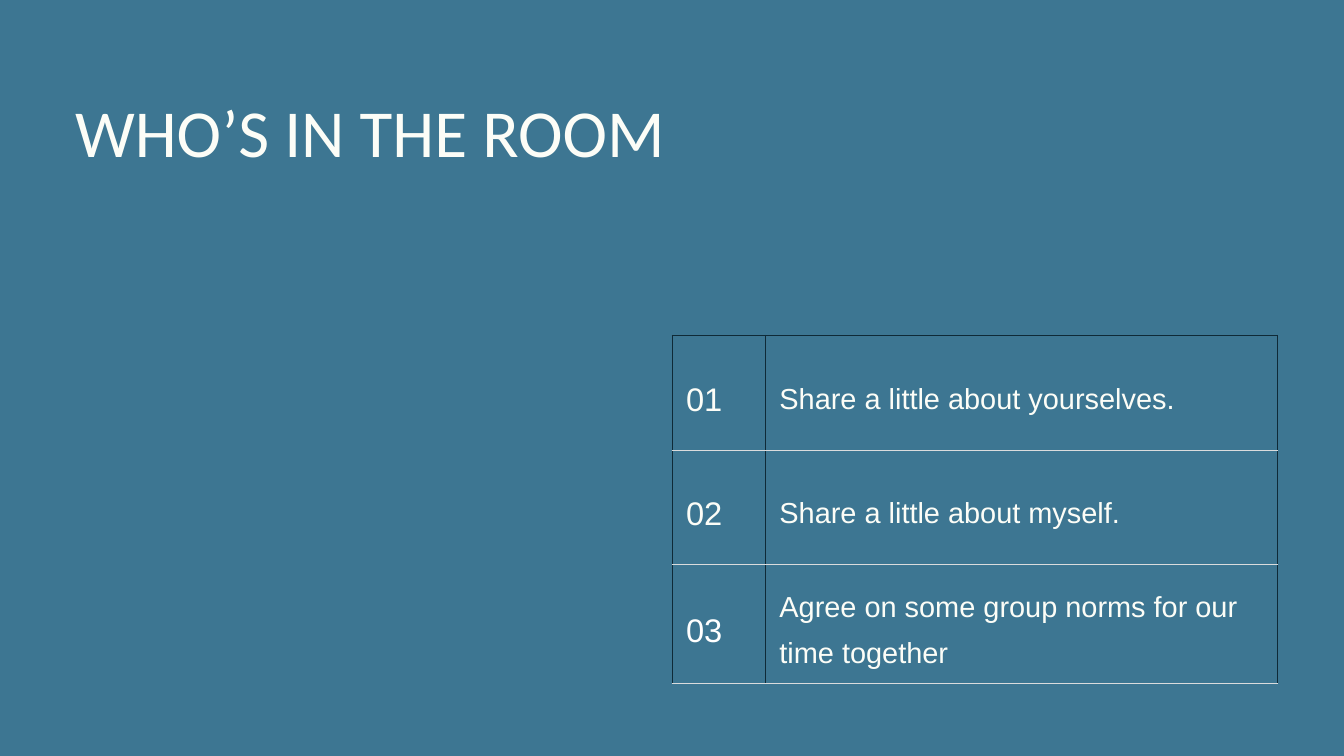
import dataclasses

import lxml.etree
import pptx
import pptx.dml.color
import pptx.enum.text
import pptx.oxml.ns
import pptx.util

Cm = pptx.util.Cm


@dataclasses.dataclass(frozen=True)
class Theme:
    background: str = "3D7692"
    text: str = "FCFDF7"
    white: str = "FFFFFF"
    dark_line: str = "0F2A37"
    light_line: str = "DBDCDD"
    title_font: str = "Calibri"
    body_font: str = "Arial"
    title_size: int = 72
    number_size: int = 35
    item_size: int = 31
    line_width: float = 0.75


def write_text(frame, text, *, font, size, color, line_spacing, margin, anchor):
    frame.word_wrap = True
    frame.vertical_anchor = anchor
    frame.margin_left = frame.margin_right = Cm(margin)
    frame.margin_top = frame.margin_bottom = Cm(margin)
    paragraph = frame.paragraphs[0]
    paragraph.alignment = pptx.enum.text.PP_ALIGN.LEFT
    paragraph.line_spacing = line_spacing
    run = paragraph.add_run()
    run.text = text
    run.font.name = font
    run.font.size = pptx.util.Pt(size)
    run.font.color.rgb = pptx.dml.color.RGBColor.from_string(color)


class SlideBuilder:
    def __init__(self, presentation, theme):
        self.theme = theme
        title_only = presentation.slide_layouts[5]
        self.slide = presentation.slides.add_slide(title_only)
        fill = self.slide.background.fill
        fill.solid()
        fill.fore_color.rgb = pptx.dml.color.RGBColor.from_string(theme.background)

    def title(self, text, left, top, width, height):
        shape = self.slide.shapes.title
        shape.left, shape.top = Cm(left), Cm(top)
        shape.width, shape.height = Cm(width), Cm(height)
        write_text(shape.text_frame, text, font=self.theme.title_font,
                   size=self.theme.title_size, color=self.theme.text,
                   line_spacing=1.2, margin=0,
                   anchor=pptx.enum.text.MSO_ANCHOR.TOP)
        shape.text_frame.auto_size = pptx.enum.text.MSO_AUTO_SIZE.NONE

    def borders(self, cell, colors):
        """Draw the cell edges; colors maps L, R, T and B, in that order."""
        properties = cell._tc.get_or_add_tcPr()
        for position, (side, color) in enumerate(colors.items()):
            line = lxml.etree.Element(
                pptx.oxml.ns.qn(f"a:ln{side}"),
                w=str(pptx.util.Pt(self.theme.line_width)))
            fill = lxml.etree.SubElement(line, pptx.oxml.ns.qn("a:solidFill"))
            lxml.etree.SubElement(fill, pptx.oxml.ns.qn("a:srgbClr"), val=color)
            properties.insert(position, line)

    def numbered_table(self, items, left, top, column_widths, row_height):
        theme = self.theme
        table = self.slide.shapes.add_table(
            len(items), len(column_widths), Cm(left), Cm(top),
            Cm(sum(column_widths)), Cm(row_height * len(items))).table
        table.first_row = table.horz_banding = False
        for column, width in zip(table.columns, column_widths):
            column.width = Cm(width)
        for index, item in enumerate(items):
            table.rows[index].height = Cm(row_height)
            last = index == len(items) - 1
            contents = (
                (f"{index + 1:02}", theme.number_size, theme.white if last else theme.text),
                (item, theme.item_size, theme.text),
            )
            edges = {
                "L": theme.dark_line,
                "R": theme.dark_line,
                "T": theme.light_line if index else theme.dark_line,
                "B": theme.light_line,
            }
            for cell, (text, size, color) in zip(table.rows[index].cells, contents):
                cell.fill.background()
                self.borders(cell, edges)
                cell.vertical_anchor = pptx.enum.text.MSO_ANCHOR.MIDDLE
                cell.margin_left = cell.margin_right = Cm(0.53)
                cell.margin_top = cell.margin_bottom = Cm(0.53)
                write_text(cell.text_frame, text, font=theme.body_font, size=size,
                           color=color, line_spacing=1.4, margin=0.53,
                           anchor=pptx.enum.text.MSO_ANCHOR.MIDDLE)
                # Cells keep their layout in the cell properties only.
                body = cell.text_frame._txBody.bodyPr
                body.attrib.clear()


def main():
    presentation = pptx.Presentation()
    presentation.slide_width = Cm(50.8)
    presentation.slide_height = Cm(28.58)
    builder = SlideBuilder(presentation, Theme())
    builder.title("WHO’S IN THE ROOM", left=2.84, top=2.82, width=23.34, height=3.07)
    builder.numbered_table(
        ["Share a little about yourselves.",
         "Share a little about myself.",
         "Agree on some group norms for our time together"],
        left=25.4, top=12.67, column_widths=(3.53, 19.35), row_height=4.34)
    presentation.save("out.pptx")


if __name__ == "__main__":
    main()
